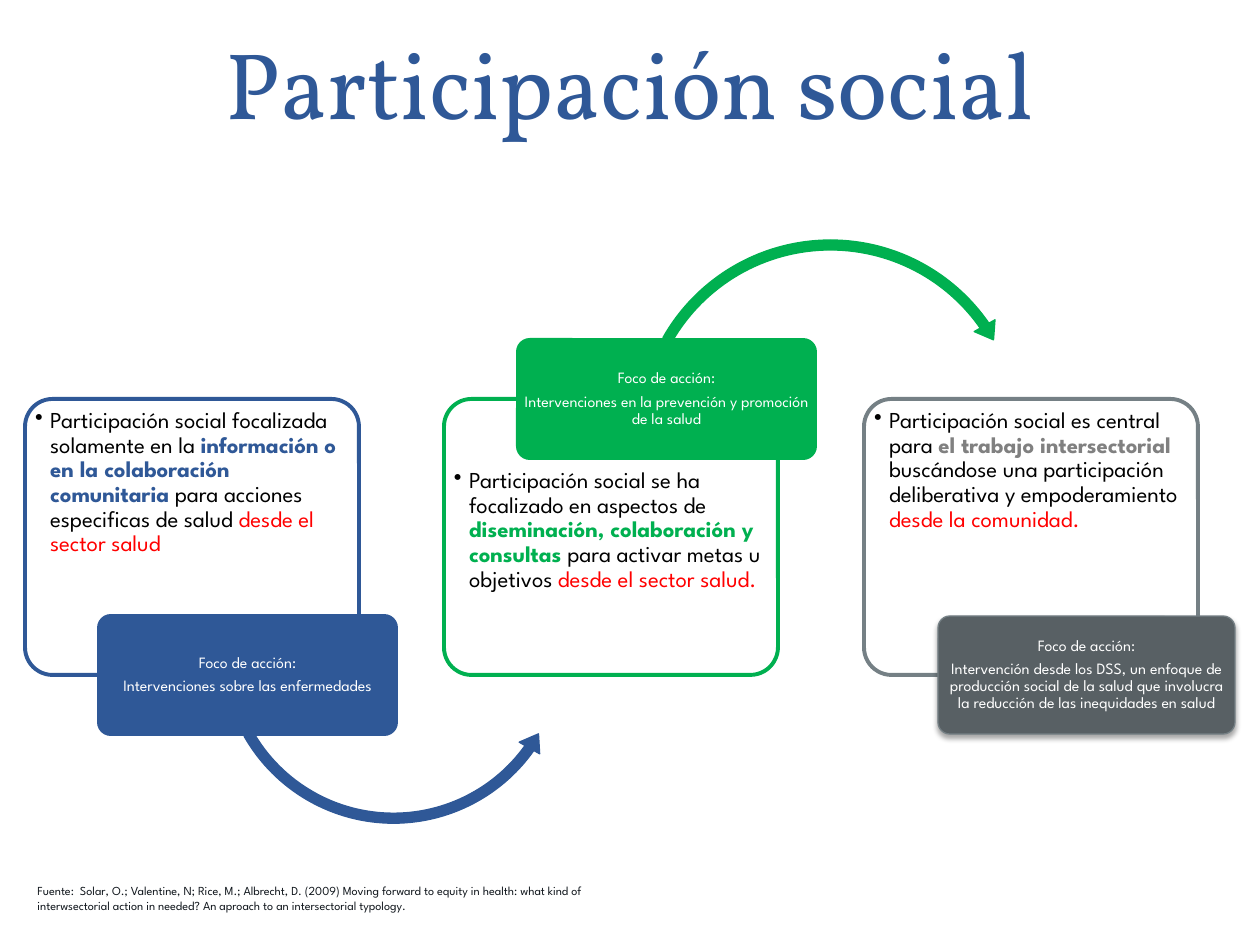
"""Slide on social participation: three linked cards with their focus of action."""
from lxml import etree
from pptx import Presentation, util as u
from pptx.dml.color import RGBColor
from pptx.enum import shapes, text
from pptx.oxml.ns import qn

PX = 914400 / 126
HEAD, BODY = "Vollkorn", "League Spartan"
COLORS = {
    "blue": "2F5897", "green": "00B050", "slate": "586064", "edge": "758085",
    "gray": "808080", "red": "FF0000", "black": "000000", "white": "FFFFFF", "ink": "11171D",
}
TITLE = "Participación social"
FOCUS = "Foco de acción:"
SOURCE = ("Fuente:  Solar, O.; Valentine, N; Rice, M.; Albrecht, D. (2009) Moving forward to equity "
          "in health: what kind of interwsectorial action in needed? An aproach to an "
          "intersectorial typology.")
CARDS = [
    {"line": "blue", "fill": "blue", "on_top": False, "accent": "blue",
     "text": ["Participación social focalizada solamente en la ",
              "información o en la colaboración comunitaria",
              " para acciones especificas de salud ", "desde el sector salud"],
     "focus": "Intervenciones sobre las enfermedades",
     "arrow": ("LEFT_CIRCULAR_ARROW", 215, 473, 357, (0.028, 3.47, 21.225, 90.245, 0.033))},
    {"line": "green", "fill": "green", "on_top": True, "accent": "green",
     "text": ["Participación social se ha focalizado en aspectos de ",
              "diseminación, colaboración y consultas ",
              "para activar metas u objetivos ", "desde el sector salud."],
     "focus": "Intervenciones en la prevención y promoción de la salud",
     "arrow": ("CIRCULAR_ARROW", 631, 233, 399, (0.025, 3.078, 195.167, 125.755, 0.03))},
    {"line": "edge", "fill": "slate", "on_top": False, "accent": "gray",
     "text": ["Participación social es central para ", "el trabajo intersectorial ",
              "buscándose una participación deliberativa y empoderamiento ",
              "desde la comunidad."],
     "focus": "Intervención desde los DSS, un enfoque de producción social de la salud que "
              "involucra la reducción de las inequidades en salud",
     "arrow": None},
]
LEFT, TOP, TWO_PITCHES = 25, 399, 839
CARD_W, CARD_H, CARD_PAD, TEXT_H = 334, 276, 6, 204
LABEL_W, LABEL_H, LABEL_DX, LABEL_PAD = 297, 118, 74, 3


def emu(*px):
    return [u.Emu(round(v * PX)) for v in px]


def rgb(name):
    return RGBColor.from_string(COLORS[name])


def style(font, name, size, color, bold=False):
    font.name, font.size, font.bold = name, u.Pt(size), bold
    font.color.rgb = rgb(color)


def add_shape(slide, kind, box, fill, line, width, adjust):
    s = slide.shapes.add_shape(getattr(shapes.MSO_SHAPE, kind), *emu(*box))
    s.shadow.inherit = False
    s.fill.solid()
    s.fill.fore_color.rgb = rgb(fill)
    s.line.color.rgb = rgb(line)
    s.line.width = u.Pt(width)
    for i, value in enumerate(adjust):
        s.adjustments[i] = value
    return s


def add_frame(slide, box, side=None, top=None):
    tf = slide.shapes.add_textbox(*emu(*box)).text_frame
    tf.word_wrap = True
    if side is not None:
        tf.margin_left, tf.margin_right, tf.margin_top, tf.margin_bottom = emu(side, side, top, top)
    return tf


def add_text(slide, box, words, font, size, color):
    tf = add_frame(slide, box)
    tf.text = words
    style(tf.paragraphs[0].runs[0].font, font, size, color)
    return tf


def add_card(slide, x, card):
    add_shape(slide, "ROUNDED_RECTANGLE", (x, TOP, CARD_W, CARD_H),
              "white", card["line"], 2.25, [0.1])
    y = TOP + (CARD_H - CARD_PAD - TEXT_H if card["on_top"] else CARD_PAD)
    tf = add_frame(slide, (x + CARD_PAD, y, CARD_W - 2 * CARD_PAD, TEXT_H), 4, 4)
    p = tf.paragraphs[0]
    p.line_spacing = 0.9
    pPr = p._p.get_or_add_pPr()
    indent = u.Inches(0.12)
    pPr.set("marL", str(indent))
    pPr.set("indent", str(-indent))
    etree.SubElement(pPr, qn("a:buChar"), char="••")
    for i, (words, color) in enumerate(zip(card["text"], ("black", card["accent"], "black", "red"))):
        r = p.add_run()
        r.text = words
        style(r.font, BODY, 13, color, i == 1)


def add_label(slide, x, card):
    edge = TOP if card["on_top"] else TOP + CARD_H
    left, top = x + LABEL_DX, edge - LABEL_H // 2
    raised = card["fill"] != card["line"]
    s = add_shape(slide, "ROUNDED_RECTANGLE", (left, top, LABEL_W, LABEL_H),
                  card["fill"], card["line"], 0.75 if raised else 2.25, [0.1])
    if raised:
        add_shadow(s)
    tf = add_frame(slide, (left + LABEL_PAD, top + LABEL_PAD,
                           LABEL_W - 2 * LABEL_PAD, LABEL_H - 2 * LABEL_PAD), 2, 2)
    tf.vertical_anchor = text.MSO_ANCHOR.MIDDLE
    tf.text = FOCUS + "\n" + card["focus"]
    for p in tf.paragraphs:
        p.alignment = text.PP_ALIGN.CENTER
        p.line_spacing = 0.9
        p.space_after = u.Pt(3.5)
        style(p.runs[0].font, BODY, 9, "white")


def add_shadow(s):
    effects = s._element.spPr.find(qn("a:effectLst"))
    shadow = etree.SubElement(effects, qn("a:outerShdw"), blurRad=str(u.Pt(3.1)),
                              dist=str(u.Pt(1.8)), dir="5400000", rotWithShape="0")
    color = etree.SubElement(shadow, qn("a:srgbClr"), val=COLORS["black"])
    etree.SubElement(color, qn("a:alpha"), val="35000")


def main():
    prs = Presentation()
    prs.slide_width, prs.slide_height = emu(1260, 945)
    slide = prs.slides.add_slide(prs.slide_layouts[6])

    tf = add_text(slide, (63, 0, 1134, 145), TITLE, HEAD, 54, "blue")
    tf.vertical_anchor = text.MSO_ANCHOR.BOTTOM
    tf.paragraphs[0].alignment = text.PP_ALIGN.CENTER
    tf.paragraphs[0].line_spacing = u.Pt(58)

    for i, card in enumerate(CARDS):
        x = LEFT + i * TWO_PITCHES // 2
        add_card(slide, x, card)
        if card["arrow"]:
            kind, left, top, size, adjust = card["arrow"]
            add_shape(slide, kind, (left, top, size, size), card["fill"], card["line"], 0.75, adjust)
        add_label(slide, x, card)

    tf = add_text(slide, (25, 877, 635, 43), SOURCE, BODY, 7, "ink")
    tf.auto_size = text.MSO_AUTO_SIZE.SHAPE_TO_FIT_TEXT
    prs.save("out.pptx")


if __name__ == "__main__":
    main()
